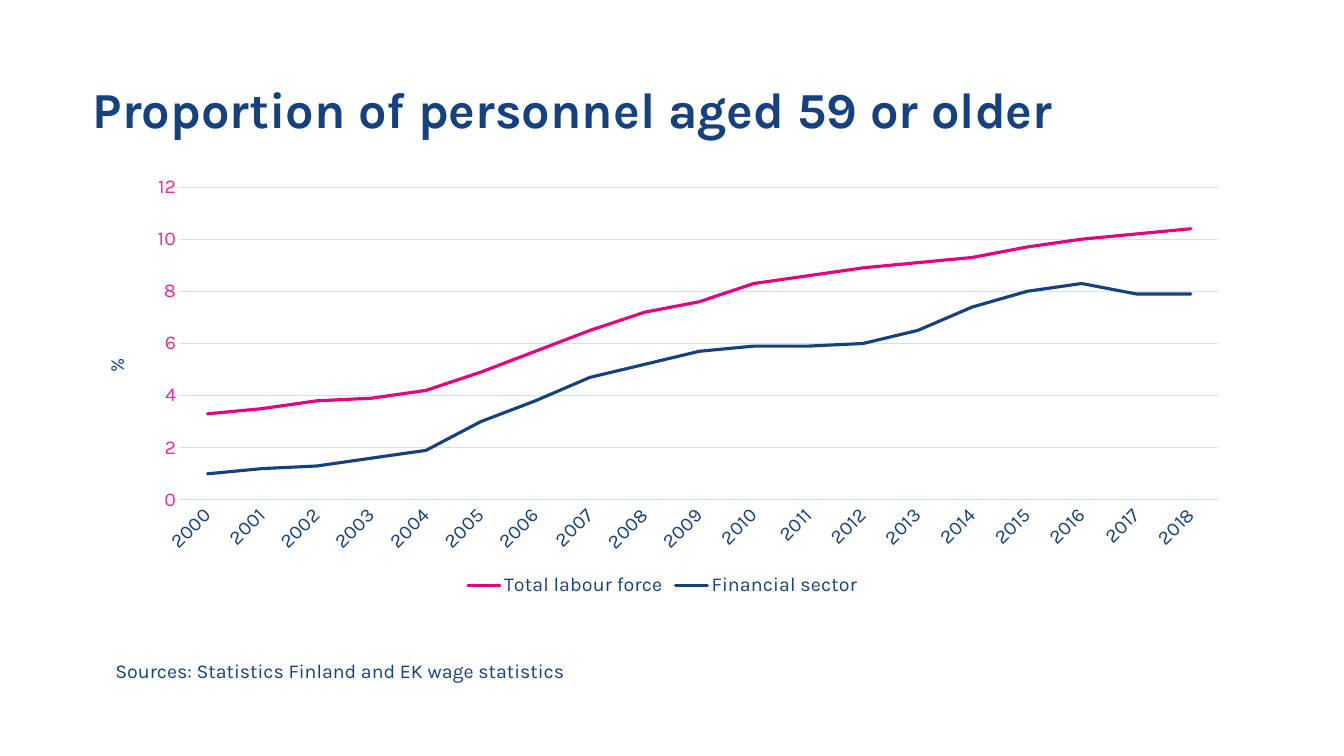
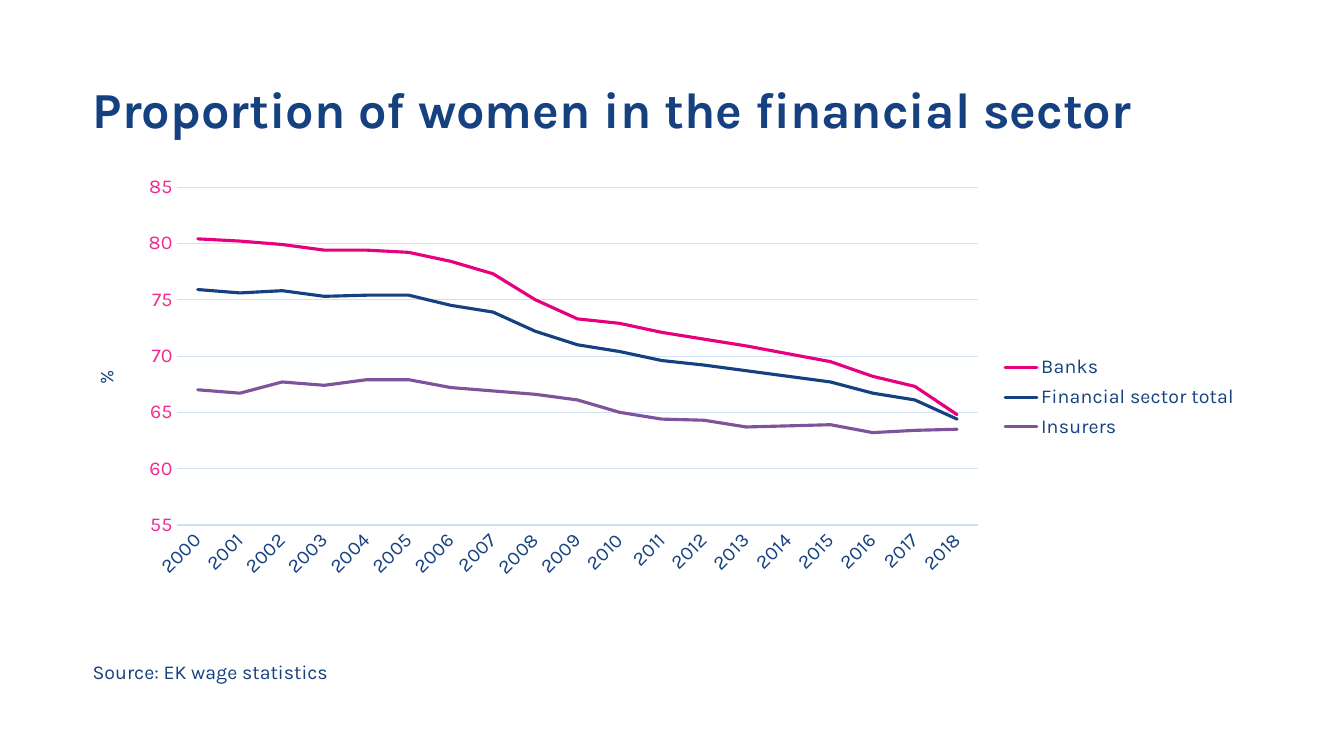
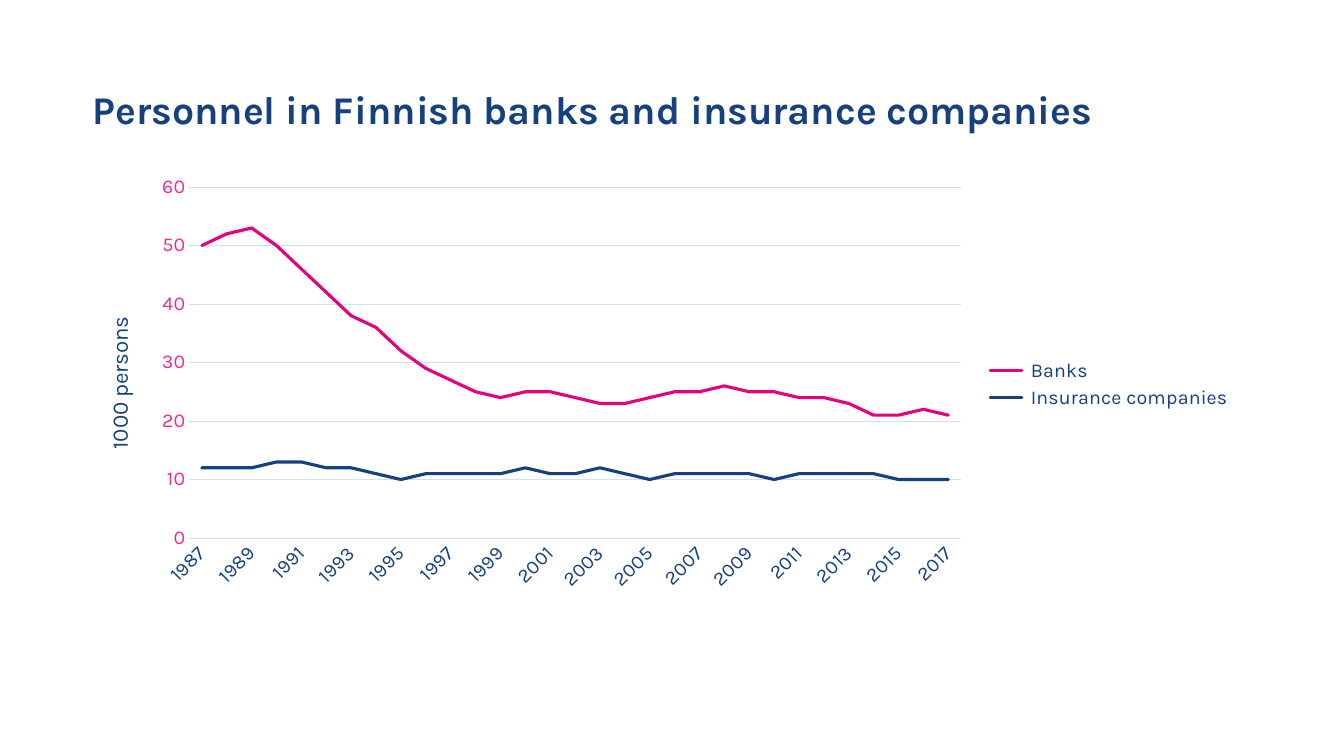
"""Build three line-chart slides on personnel in the Finnish financial sector."""
from dataclasses import dataclass

from lxml.etree import SubElement
from pptx import Presentation
from pptx.chart.data import CategoryChartData as ChartData
from pptx.dml.color import RGBColor as Rgb
from pptx.enum.chart import XL_CHART_TYPE as ChartType
from pptx.enum.chart import XL_LEGEND_POSITION as LegendSide
from pptx.enum.chart import XL_TICK_MARK as TickMark
from pptx.enum.text import MSO_ANCHOR as Anchor
from pptx.enum.text import MSO_AUTO_SIZE as AutoSize
from pptx.enum.text import PP_ALIGN as Align
from pptx.oxml.ns import qn
from pptx.util import Inches, Pt


@dataclass(frozen=True)
class Theme:
    font: str = "Karla"
    navy: Rgb = Rgb.from_string("164180")
    chart_text: Rgb = Rgb.from_string("164280")
    value_text: Rgb = Rgb.from_string("EE2C90")
    grid: Rgb = Rgb.from_string("D1E0F7")
    magenta: Rgb = Rgb.from_string("E6007E")
    purple: Rgb = Rgb.from_string("7F539C")
    body: int = 14
    grid_width: float = 0.75
    series_width: float = 2.25


theme = Theme()
series_colors = (theme.magenta, theme.navy, theme.purple)

slides = [
    {
        "title": "Proportion of personnel aged 59 or older",
        "title_size": 36,
        "years": range(2000, 2019),
        "series": {
            "Total labour force": (3.3, 3.5, 3.8, 3.9, 4.2, 4.9, 5.7, 6.5, 7.2, 7.6,
                                   8.3, 8.6, 8.9, 9.1, 9.3, 9.7, 10, 10.2, 10.4),
            "Financial sector": (1, 1.2, 1.3, 1.6, 1.9, 3, 3.8, 4.7, 5.2, 5.7,
                                 5.9, 5.9, 6, 6.5, 7.4, 8, 8.3, 7.9, 7.9),
        },
        "unit": "%",
        "unit_size": 14,
        "unit_percent": {"x": 1.5, "y": 43.1},
        "plot_percent": {"x": 8.4, "y": 4.5, "w": 89.5, "h": 72.2},
        "legend": LegendSide.BOTTOM,
        "legend_percent": None,
        "minimum": 0,
        "source": "Sources: Statistics Finland and EK wage statistics",
        "source_place": (5.1, 51.9, 24, 2.7),
        "source_wrap": False,
    },
    {
        "title": "Proportion of women in the financial sector",
        "title_size": 36,
        "years": range(2000, 2019),
        "series": {
            "Banks": (80.4, 80.2, 79.9, 79.4, 79.4, 79.2, 78.4, 77.3, 75, 73.3,
                      72.9, 72.1, 71.5, 70.9, 70.2, 69.5, 68.2, 67.3, 64.8),
            "Financial sector total": (75.9, 75.6, 75.8, 75.3, 75.4, 75.4, 74.5,
                                       73.9, 72.2, 71, 70.4, 69.6, 69.2, 68.7,
                                       68.2, 67.7, 66.7, 66.1, 64.4),
            "Insurers": (67, 66.7, 67.7, 67.4, 67.9, 67.9, 67.2, 66.9, 66.6, 66.1,
                         65, 64.4, 64.3, 63.7, 63.8, 63.9, 63.2, 63.4, 63.5),
        },
        "unit": "%",
        "unit_size": 14,
        "unit_percent": {"x": 0.6, "y": 45.8},
        "plot_percent": {"x": 8.1, "y": 4.5, "w": 69.1, "h": 78},
        "legend": LegendSide.RIGHT,
        "legend_percent": {"x": 79, "y": 42, "w": 20.8, "h": 22},
        "minimum": 55,
        "source": "Source: EK wage statistics",
        "source_place": (4, 52, 15.8, 2.7),
        "source_wrap": True,
    },
    {
        "title": "Personnel in Finnish banks and insurance companies",
        "title_size": 28,
        "years": range(1987, 2018),
        "series": {
            " Banks": (50, 52, 53, 50, 46, 42, 38, 36, 32, 29, 27, 25, 24, 25, 25, 24,
                       23, 23, 24, 25, 25, 26, 25, 25, 24, 24, 23, 21, 21, 22, 21),
            " Insurance companies": (12, 12, 12, 13, 13, 12, 12, 11, 10, 11, 11, 11,
                                     11, 12, 11, 11, 12, 11, 10, 11, 11, 11, 11, 10,
                                     11, 11, 11, 11, 10, 10, 10),
        },
        "unit": "1000 persons",
        "unit_size": 16,
        "unit_percent": {"x": 1.6, "y": 33.5},
        "plot_percent": {"x": 9.2, "y": 4.5, "w": 66.5, "h": 81},
        "legend": LegendSide.RIGHT,
        "legend_percent": None,
        "minimum": 0,
        "source": None,
    },
]

deck = Presentation()
deck.slide_width, deck.slide_height = Inches(13.33), Inches(7.5)
column, row = deck.slide_width / 65, deck.slide_height / 60


def style(font, size, color, bold=False):
    font.name, font.size, font.bold = theme.font, Pt(size), bold
    font.color.rgb = color


def fix_layout(element, index, percents, target=None):
    old = element.find(qn("c:layout"))
    if old is not None:
        element.remove(old)
    layout = element.makeelement(qn("c:layout"))
    element.insert(index, layout)
    manual = SubElement(layout, qn("c:manualLayout"))
    if target:
        SubElement(manual, qn("c:layoutTarget"), val=target)
    for side in ("x", "y"):
        SubElement(manual, qn(f"c:{side}Mode"), val="edge")
    for side, percent in percents.items():
        SubElement(manual, qn(f"c:{side}"), val=f"{percent / 100:.3f}")


for content in slides:
    page = deck.slides.add_slide(deck.slide_layouts[5])

    title = page.shapes.title
    title.left, title.top = int(4 * column), int(3.1 * row)
    title.width, title.height = int(56.1 * column), int(11.6 * row)
    title.text_frame.word_wrap = True
    title.text_frame.auto_size = AutoSize.NONE
    title.text_frame.vertical_anchor = Anchor.MIDDLE
    para = title.text_frame.paragraphs[0]
    para.alignment, para.line_spacing = Align.LEFT, 0.9
    span = para.add_run()
    span.text = content["title"]
    style(span.font, content["title_size"], theme.navy, bold=True)

    data = ChartData(number_format="General")
    data.categories = [str(year) for year in content["years"]]
    for name, values in content["series"].items():
        data.add_series(name, values)
    chart = page.shapes.add_chart(
        ChartType.LINE, int(4 * column), int(13.3 * row),
        int(56.1 * column), int(34.4 * row), data).chart
    style(chart.font, theme.body, theme.chart_text)
    chart.has_title = False
    chart.has_legend = True
    chart.legend.position = content["legend"]
    chart.legend.include_in_layout = False
    style(chart.legend.font, theme.body, theme.chart_text)
    if content["legend_percent"]:
        legend = chart.element.chart.find(qn("c:legend"))
        fix_layout(legend, 1, content["legend_percent"])

    plot = chart.plots[0]
    plot.vary_by_categories = False
    for series, color in zip(plot.series, series_colors):
        series.smooth = False
        series.format.line.color.rgb = color
        series.format.line.width = Pt(theme.series_width)

    years, scale = chart.category_axis, chart.value_axis
    for axis, color in ((years, theme.chart_text), (scale, theme.value_text)):
        axis.major_tick_mark = axis.minor_tick_mark = TickMark.NONE
        style(axis.tick_labels.font, theme.body, color)
    years.has_major_gridlines, scale.has_major_gridlines = False, True
    for line in (years.format.line, scale.major_gridlines.format.line):
        line.color.rgb = theme.grid
        line.width = Pt(theme.grid_width)
    scale.format.line.fill.background()
    scale.minimum_scale = content["minimum"]
    scale.tick_labels.number_format = "0"
    scale.tick_labels.number_format_is_linked = False

    unit = scale.axis_title
    span = unit.text_frame.paragraphs[0].add_run()
    span.text = content["unit"]
    style(span.font, content["unit_size"], theme.chart_text)
    unit.element.find(f".//{qn('a:bodyPr')}").set("rot", "-5400000")
    fix_layout(unit.element, 1, content["unit_percent"])

    plot_area = chart.element.chart.plotArea
    fix_layout(plot_area, 0, content["plot_percent"], "inner")
    for outline in plot_area.iterfind(f".//{qn('c:ser')}/{qn('c:spPr')}/{qn('a:ln')}"):
        outline.set("cap", "rnd")
        SubElement(outline, qn("a:round"))
    label_body = plot_area.find("/".join(map(qn, ("c:catAx", "c:txPr", "a:bodyPr"))))
    label_body.set("rot", "-2700000")
    label_body.set("vert", "horz")

    if content["source"]:
        left, top, width, height = content["source_place"]
        box = page.shapes.add_textbox(int(left * column), int(top * row),
                                      int(width * column), int(height * row))
        box.text_frame.word_wrap = content["source_wrap"]
        box.text_frame.auto_size = AutoSize.SHAPE_TO_FIT_TEXT
        span = box.text_frame.paragraphs[0].add_run()
        span.text = content["source"]
        style(span.font, theme.body, theme.navy)

deck.save("out.pptx")
